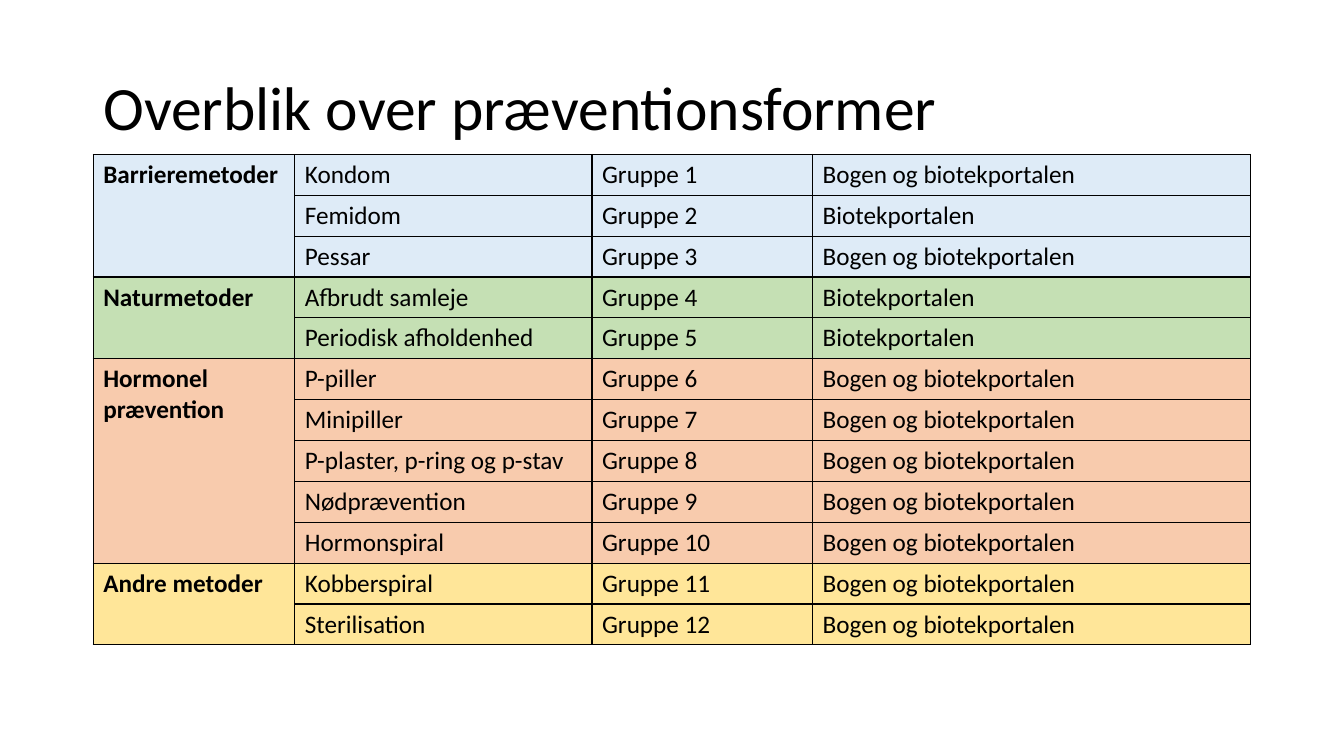
"""Build a slide with an overview table of contraceptive methods."""
from lxml import etree
from pptx import Presentation
from pptx.dml.color import RGBColor
from pptx.enum.text import MSO_ANCHOR, PP_ALIGN
from pptx.oxml.ns import qn
from pptx.util import Cm, Pt

MIDDLE = MSO_ANCHOR.MIDDLE
LEFT = PP_ALIGN.LEFT

BLACK = RGBColor(0x00, 0x00, 0x00)
BLUE = RGBColor(0xDE, 0xEB, 0xF7)
GREEN = RGBColor(0xC5, 0xE0, 0xB4)
ORANGE = RGBColor(0xF8, 0xCB, 0xAD)
YELLOW = RGBColor(0xFF, 0xE6, 0x99)

FONT = "Calibri"
PORTAL = "Biotekportalen"
BOOK_AND_PORTAL = "Bogen og biotekportalen"
PORTAL_ONLY_GROUPS = {2, 4, 5}

CATEGORIES = [
    ("Barrieremetoder", BLUE, ["Kondom", "Femidom", "Pessar"]),
    ("Naturmetoder", GREEN, ["Afbrudt samleje", "Periodisk afholdenhed"]),
    ("Hormonel prævention", ORANGE,
     ["P-piller", "Minipiller", "P-plaster, p-ring og p-stav",
      "Nødprævention", "Hormonspiral"]),
    ("Andre metoder", YELLOW, ["Kobberspiral", "Sterilisation"]),
]
COLUMN_WIDTHS = [5.08, 7.49, 5.56, 11.03]
ROW_HEIGHT = 1.03


def format_text(paragraph, size, bold=False):
    for run in paragraph.runs:
        run.font.name = FONT
        run.font.size = Pt(size)
        run.font.bold = bold
        run.font.color.rgb = BLACK


def add_borders(cell):
    properties = cell._tc.get_or_add_tcPr()
    for side in ("a:lnL", "a:lnR", "a:lnT", "a:lnB"):
        line = etree.SubElement(properties, qn(side), w=str(Pt(1)))
        fill = etree.SubElement(line, qn("a:solidFill"))
        etree.SubElement(fill, qn("a:srgbClr"), val=str(BLACK))


presentation = Presentation()
presentation.slide_width = Cm(33.87)
presentation.slide_height = Cm(19.05)
slide = presentation.slides.add_slide(presentation.slide_layouts[5])

title = slide.shapes.title
title.left, title.top = Cm(2.35), Cm(0.94)
title.width, title.height = Cm(29.21), Cm(3.68)
title.text_frame.text = "Overblik over præventionsformer"
title.text_frame.vertical_anchor = MIDDLE
title_paragraph = title.text_frame.paragraphs[0]
title_paragraph.alignment = LEFT
title_paragraph.line_spacing = 0.9
format_text(title_paragraph, 44)

row_count = sum(len(methods) for name, color, methods in CATEGORIES)
table = slide.shapes.add_table(
    row_count, len(COLUMN_WIDTHS), Cm(2.35), Cm(3.89),
    Cm(sum(COLUMN_WIDTHS)), Cm(row_count * ROW_HEIGHT)).table
table.first_row = False
table.horz_banding = False
for column, width in zip(table.columns, COLUMN_WIDTHS):
    column.width = Cm(width)
for row in table.rows:
    row.height = Cm(ROW_HEIGHT)

group = 0
for category, color, methods in CATEGORIES:
    first_row = group
    for method in methods:
        group += 1
        source = PORTAL if group in PORTAL_ONLY_GROUPS else BOOK_AND_PORTAL
        label = category if group == first_row + 1 else ""
        values = [label, method, f"Gruppe {group}", source]
        for column_index, value in enumerate(values):
            cell = table.cell(group - 1, column_index)
            add_borders(cell)
            cell.fill.solid()
            cell.fill.fore_color.rgb = color
            cell.text_frame.text = value
            format_text(cell.text_frame.paragraphs[0], 18, column_index == 0)
    table.cell(first_row, 0).merge(table.cell(group - 1, 0))

presentation.save("out.pptx")
